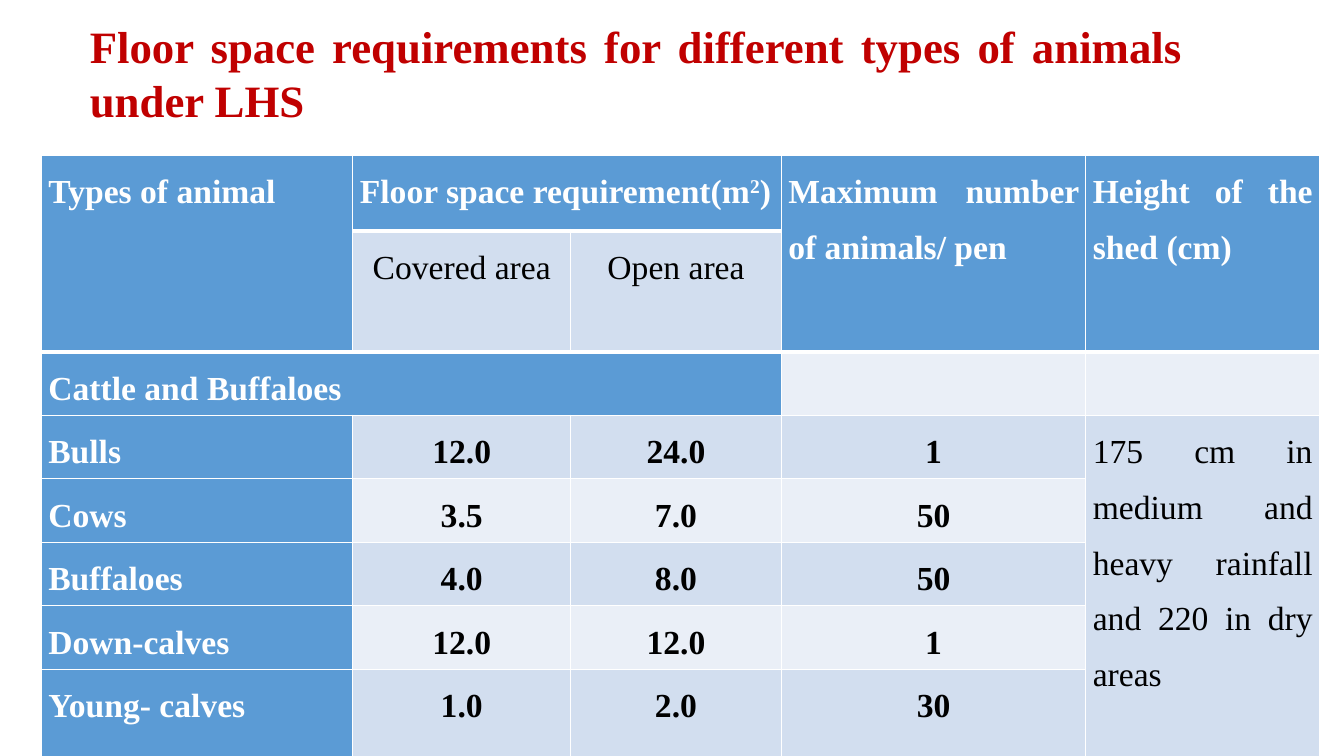
from dataclasses import dataclass

from lxml.etree import SubElement
from pptx import Presentation
from pptx.dml.color import RGBColor
from pptx.enum.text import MSO_ANCHOR, MSO_AUTO_SIZE, PP_ALIGN
from pptx.oxml.ns import qn
from pptx.slide import Slide
from pptx.table import Table, _Cell
from pptx.text.text import _Paragraph
from pptx.util import Emu, Inches, Pt

GRID_STEP = Inches(0.01)
FONT = "Times New Roman"
WHITE, BLACK, RED = "FFFFFF", "000000", "C00000"
BLUE, BAND_DARK, BAND_LIGHT = "5B9BD5", "D2DEEF", "EAEFF7"
COLUMNS = (309, 216, 209, 302, 232)
ROWS = (75, 63, 63, 63, 63, 63, 63, 92)
HEADER_CELLS = {(0, 0), (0, 1), (0, 2), (0, 3), (0, 4), (1, 0), (1, 3), (1, 4)}


@dataclass(frozen=True)
class Entry:
    row: int
    column: int
    text: str
    fill: str = BLUE
    color: str = WHITE
    bold: bool = True
    align: PP_ALIGN = PP_ALIGN.JUSTIFY
    row_span: int = 1
    column_span: int = 1
    superscript: str = ""
    ending: str = ""


@dataclass(frozen=True)
class Animal:
    name: str
    covered: str
    open: str
    per_pen: str


ANIMALS = (
    Animal("Bulls", "12.0", "24.0", "1"),
    Animal("Cows", "3.5", "7.0", "50"),
    Animal("Buffaloes", "4.0", "8.0", "50"),
    Animal("Down-calves", "12.0", "12.0", "1"),
    Animal("Young- calves", "1.0", "2.0", "30"),
)
HEADINGS = (
    Entry(0, 0, "Types of animal", row_span=2),
    Entry(0, 1, "Floor space requirement(m", column_span=2, superscript="2", ending=")"),
    Entry(0, 3, "Maximum number of animals/ pen", row_span=2),
    Entry(0, 4, "Height of the shed (cm)", row_span=2),
    Entry(1, 1, "Covered area", BAND_DARK, BLACK, False, PP_ALIGN.CENTER),
    Entry(1, 2, "Open area", BAND_DARK, BLACK, False, PP_ALIGN.CENTER),
    Entry(2, 0, "Cattle and Buffaloes", column_span=3),
    Entry(2, 3, "", BAND_LIGHT),
    Entry(2, 4, "", BAND_LIGHT),
    Entry(3, 4, "175 cm in medium and heavy rainfall and 220 in dry areas",
          BAND_DARK, BLACK, False, row_span=5),
)


def rgb(color: str) -> RGBColor:
    return RGBColor.from_string(color)


def grid(steps: int) -> Emu:
    return Emu(steps * GRID_STEP)


def add_span(para: _Paragraph, text: str, size: int, color: str, bold: bool,
             raised: bool = False) -> None:
    span = para.add_run()
    span.text = text
    span.font.name = FONT
    span.font.size = Pt(size)
    span.font.bold = bold
    span.font.color.rgb = rgb(color)
    if raised:
        span.font._element.set("baseline", "30000")


def add_borders(cell: _Cell, bottom: int) -> None:
    properties = cell._tc.get_or_add_tcPr()
    for side, width in (("L", 1), ("R", 1), ("T", 1), ("B", bottom)):
        line = SubElement(properties, qn(f"a:ln{side}"), w=str(Pt(width)))
        SubElement(SubElement(line, qn("a:solidFill")), qn("a:srgbClr"), val=WHITE)


def fill_entry(table: Table, entry: Entry) -> None:
    cell = table.cell(entry.row, entry.column)
    if entry.row_span * entry.column_span > 1:
        cell.merge(table.cell(entry.row + entry.row_span - 1,
                              entry.column + entry.column_span - 1))
    cell.fill.solid()
    cell.fill.fore_color.rgb = rgb(entry.fill)
    cell.margin_left = cell.margin_right = grid(7)
    cell.margin_top = cell.margin_bottom = 0
    para = cell.text_frame.paragraphs[0]
    para.alignment = entry.align
    para.line_spacing = 1.5
    for text in (entry.text, entry.superscript, entry.ending):
        if text:
            add_span(para, text, 24, entry.color, entry.bold, text == entry.superscript)


def animal_entries() -> list[Entry]:
    entries = []
    for row, animal in enumerate(ANIMALS, start=3):
        entries.append(Entry(row, 0, animal.name))
        band = BAND_DARK if row % 2 else BAND_LIGHT
        for column, value in enumerate((animal.covered, animal.open, animal.per_pen), start=1):
            entries.append(Entry(row, column, value, band, BLACK, align=PP_ALIGN.CENTER))
    return entries


def add_space_table(page: Slide) -> None:
    table = page.shapes.add_table(len(ROWS), len(COLUMNS), grid(41), grid(154),
                                  grid(sum(COLUMNS)), grid(sum(ROWS))).table
    table.first_row = table.horz_banding = False
    for column, width in zip(table.columns, COLUMNS):
        column.width = grid(width)
    for row, height in zip(table.rows, ROWS):
        row.height = grid(height)
    for row in range(len(ROWS)):
        for column in range(len(COLUMNS)):
            add_borders(table.cell(row, column), 3 if (row, column) in HEADER_CELLS else 1)
    for entry in (*HEADINGS, *animal_entries()):
        fill_entry(table, entry)


def format_title(page: Slide) -> None:
    title = page.shapes.title
    title.left, title.top, title.width, title.height = map(grid, (79, 13, 1104, 118))
    frame = title.text_frame
    frame.word_wrap = True
    frame.auto_size = MSO_AUTO_SIZE.SHAPE_TO_FIT_TEXT
    frame.vertical_anchor = MSO_ANCHOR.MIDDLE
    para = frame.paragraphs[0]
    para.alignment = PP_ALIGN.JUSTIFY
    add_span(para, "Floor space requirements for different types of animals under LHS",
             32, RED, True)


def main() -> None:
    deck = Presentation()
    deck.slide_width, deck.slide_height = Inches(13.33), Inches(7.5)
    page = deck.slides.add_slide(deck.slide_layouts[5])
    add_space_table(page)
    format_title(page)
    deck.save("out.pptx")


if __name__ == "__main__":
    main()
